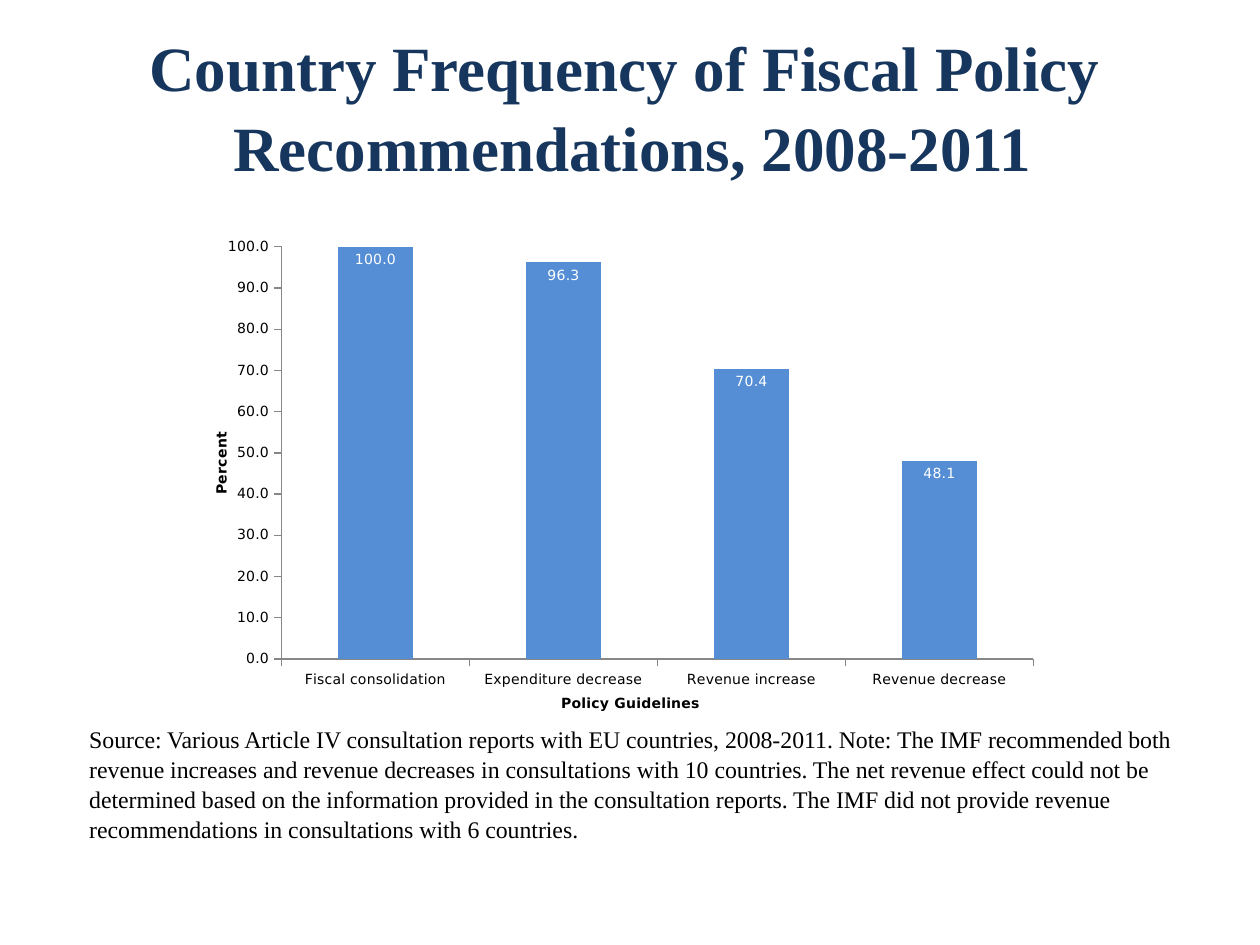
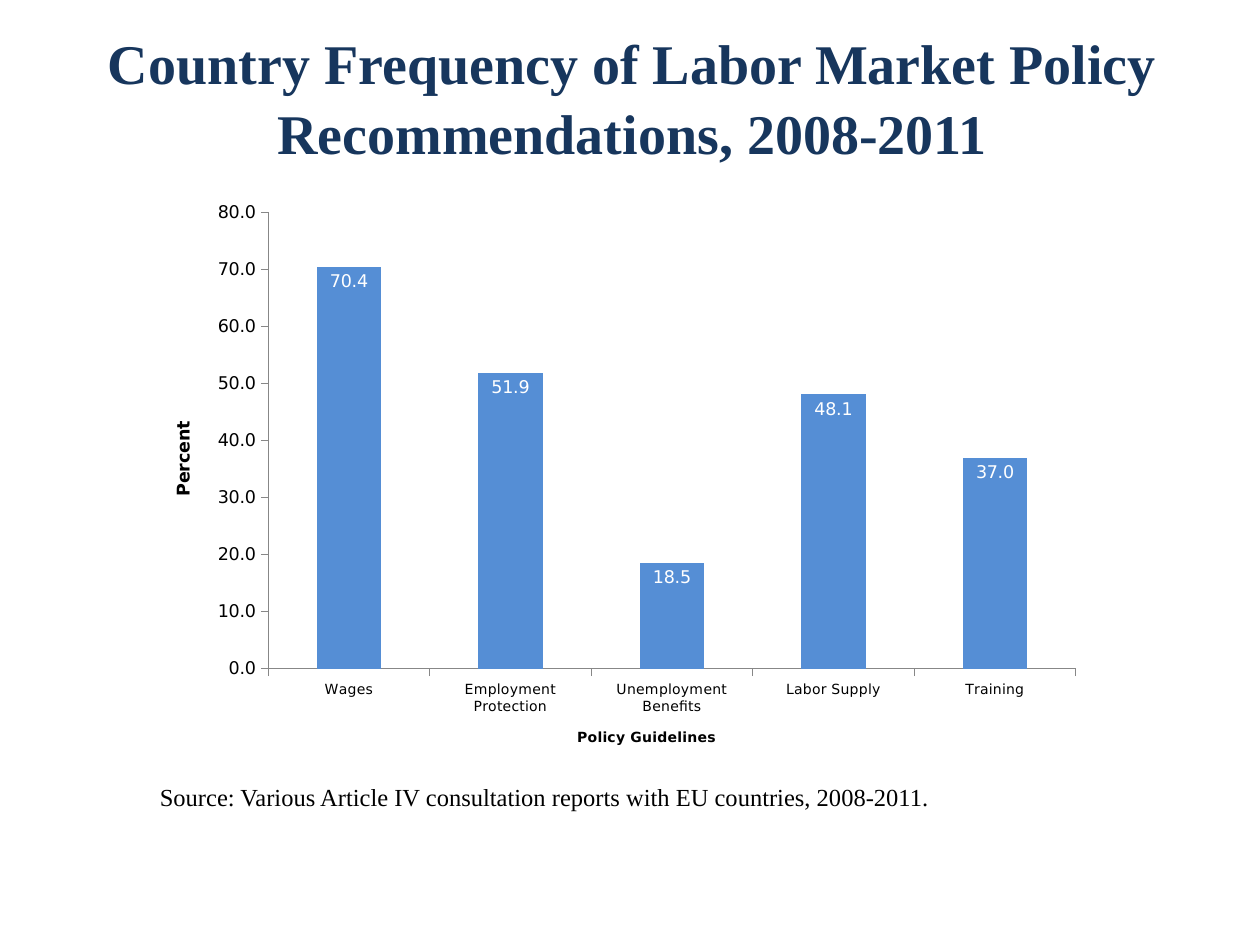
import pptx
import pptx.util
import pptx.chart.data
import pptx.dml.color
import pptx.enum.chart
import pptx.enum.text
import pptx.oxml

SLIDE_W, SLIDE_H = 10, 7.5
COLORS = {"title": "17365D", "text": "000000", "bar": "558ED5",
          "bar_label": "FFFFFF", "axis": "878787"}
TEXT_FONT, CHART_FONT = "Times New Roman", "DejaVu Sans"
LINE_SPACING = 1.05


def rgb(name):
    return pptx.dml.color.RGBColor.from_string(COLORS[name])


def place(left, top, width, height):
    """Turn shares of the slide's size into lengths."""
    return [pptx.util.Inches(share * size) for share, size in
            zip((left, top, width, height), (SLIDE_W, SLIDE_H) * 2)]


def style_font(font, name, size, color, bold=False):
    font.name, font.size, font.bold = name, pptx.util.Pt(size), bold
    font.color.rgb = rgb(color)


def add_text(slide, area, lines, size, color="text", bold=False, align=None):
    frame = slide.shapes.add_textbox(*place(*area)).text_frame
    frame.word_wrap = True
    frame.text = "\n".join(lines)
    for paragraph in frame.paragraphs:
        paragraph.alignment = align
        paragraph.line_spacing = LINE_SPACING
        style_font(paragraph.font, TEXT_FONT, size, color, bold)


def add_title(slide, area, lines, size):
    add_text(slide, area, lines, size, "title", True,
             pptx.enum.text.PP_ALIGN.CENTER)


def set_plot_area(chart, area):
    """Fix the inner plot area, given as shares of the chart's size."""
    plot_area = chart._chartSpace.chart.plotArea
    for layout in plot_area.findall(pptx.oxml.ns.qn("c:layout")):
        plot_area.remove(layout)
    settings = [("layoutTarget", "inner"), ("xMode", "edge"), ("yMode", "edge"),
                *zip("xywh", area)]
    items = "".join(f'<c:{tag} val="{value}"/>' for tag, value in settings)
    plot_area.insert(0, pptx.oxml.parse_xml(
        f'<c:layout {pptx.oxml.ns.nsdecls("c")}>'
        f"<c:manualLayout>{items}</c:manualLayout></c:layout>"))


def style_axis(axis, title, size):
    axis.has_major_gridlines = False
    axis.major_tick_mark = pptx.enum.chart.XL_TICK_MARK.OUTSIDE
    axis.format.line.color.rgb = rgb("axis")
    axis.format.line.width = pptx.util.Pt(0.75)
    style_font(axis.tick_labels.font, CHART_FONT, size, "text")
    axis.axis_title.text_frame.text = title
    style_font(axis.axis_title.text_frame.paragraphs[0].font,
               CHART_FONT, size, "text", True)


def add_frequency_chart(slide, area, plot_share, percents, maximum, size):
    """Draw the share of countries that received each recommendation."""
    data = pptx.chart.data.CategoryChartData(number_format="0.0")
    data.categories = list(percents)
    data.add_series("Series 1", list(percents.values()))
    chart = slide.shapes.add_chart(
        pptx.enum.chart.XL_CHART_TYPE.COLUMN_STACKED, *place(*area), data).chart
    chart.has_legend = chart.has_title = False
    style_font(chart.font, CHART_FONT, size, "text")

    bars = chart.plots[0]
    bars.gap_width, bars.overlap, bars.vary_by_categories = 150, 100, False
    bars.series[0].format.fill.solid()
    bars.series[0].format.fill.fore_color.rgb = rgb("bar")
    bars.has_data_labels = True
    labels = bars.data_labels
    labels.show_value = True
    labels.number_format, labels.number_format_is_linked = "0.0", False
    labels.position = pptx.enum.chart.XL_LABEL_POSITION.INSIDE_END
    style_font(labels.font, CHART_FONT, size, "bar_label")

    style_axis(chart.category_axis, "Policy Guidelines", 8)
    style_axis(chart.value_axis, "Percent", size)
    chart.value_axis.minimum_scale = 0
    chart.value_axis.maximum_scale = maximum
    chart.value_axis.major_unit = 10
    set_plot_area(chart, plot_share)


def build_fiscal_slide(slide):
    add_title(slide, (0.052, 0.02, 0.9, 0.175),
              ["Country Frequency of Fiscal Policy ",
               "Recommendations, 2008-2011"], 36)
    add_text(slide, (0.061, 0.759, 0.879, 0.115), [
        "Source: Various Article IV consultation reports with EU countries, "
        "2008-2011. Note: The IMF recommended both revenue increases and revenue "
        "decreases in consultations with 10 countries. The net revenue effect "
        "could not be determined based on the information provided in the "
        "consultation reports. The IMF did not provide revenue recommendations "
        "in consultations with 6 countries."], 13.6)
    add_frequency_chart(
        slide, (0.166, 0.241, 0.669, 0.517), (0.086, 0.039, 0.892, 0.844),
        {"Fiscal consolidation": 100, "Expenditure decrease": 96.3,
         "Revenue increase": 70.4, "Revenue decrease": 48.1}, 100, 8)


def build_labor_slide(slide):
    add_title(slide, (0.05, 0.02, 0.904, 0.157),
              ["Country Frequency of Labor Market Policy",
               "Recommendations, 2008-2011"], 32)
    add_frequency_chart(
        slide, (0.117, 0.203, 0.755, 0.591), (0.127, 0.037, 0.849, 0.817),
        {"Wages": 70.4, "Employment Protection": 51.9,
         "Unemployment Benefits": 18.5, "Labor Supply": 48.1,
         "Training": 37}, 80, 10)
    add_text(slide, (0.117, 0.82, 0.822, 0.053), [
        "Source: Various Article IV consultation reports with EU countries, "
        "2008-2011."], 14)


def main():
    deck = pptx.Presentation()
    deck.slide_width = pptx.util.Inches(SLIDE_W)
    deck.slide_height = pptx.util.Inches(SLIDE_H)
    for build in (build_fiscal_slide, build_labor_slide):
        build(deck.slides.add_slide(deck.slide_layouts[6]))
    deck.save("out.pptx")


if __name__ == "__main__":
    main()
